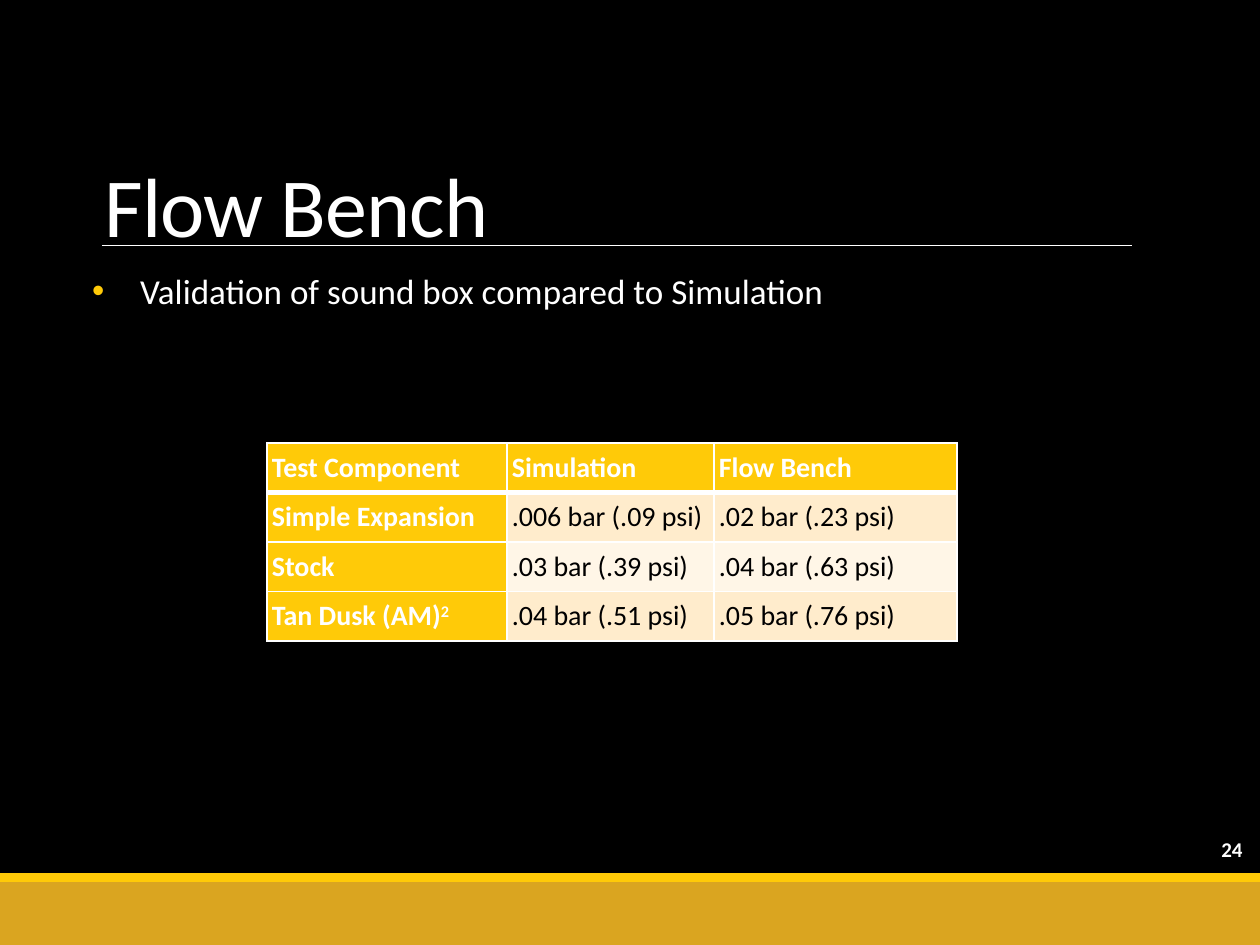
from dataclasses import dataclass

from lxml.etree import SubElement
from pptx import Presentation
from pptx.dml.color import RGBColor
from pptx.enum.shapes import MSO_CONNECTOR, MSO_SHAPE
from pptx.enum.text import MSO_ANCHOR, PP_ALIGN
from pptx.oxml.ns import qn
from pptx.util import Emu, Pt

PX = 914400 / 126


@dataclass(frozen=True)
class Theme:
    font: str = "Calibri"
    background: str = "000000"
    light: str = "FFFFFF"
    dark: str = "000000"
    accent: str = "FFCA08"
    band: str = "DAA520"
    stripes: tuple = ("FFECCC", "FFF6E7")
    title_size: int = 48
    body_size: int = 20
    table_size: int = 16
    number_size: int = 12


THEME = Theme()

RESULTS = [
    ["Test Component", "Simulation", "Flow Bench"],
    ["Simple Expansion", ".006 bar (.09 psi)", ".02 bar (.23 psi)"],
    ["Stock", ".03 bar (.39 psi)", ".04 bar (.63 psi)"],
    ["Tan Dusk (AM)", ".04 bar (.51 psi)", ".05 bar (.76 psi)"],
]
COLUMN_WIDTHS = [240, 207, 243]


def px(length):
    return Emu(round(length * PX))


def rgb(value):
    return RGBColor.from_string(value)


def apply_format(target, values):
    for name, value in values.items():
        setattr(target, name, value)


def add_run(paragraph, text, size, color, bold=False):
    run = paragraph.add_run()
    run.text = text
    apply_format(run.font, {"name": THEME.font, "size": Pt(size), "bold": bold})
    run.font.color.rgb = rgb(color)
    return run


def add_band(slide, top, height, color):
    band = slide.shapes.add_shape(
        MSO_SHAPE.RECTANGLE, 0, px(top), px(1260), px(height)
    )
    band.shadow.inherit = False
    band.fill.solid()
    band.fill.fore_color.rgb = rgb(color)
    band.line.fill.background()


def add_rule(slide, left, right, y):
    rule = slide.shapes.add_connector(
        MSO_CONNECTOR.STRAIGHT, px(left), px(y), px(right), px(y)
    )
    rule.line.color.rgb = rgb(THEME.light)
    rule.line.width = Pt(0.5)
    SubElement(rule._element.spPr, qn("a:effectLst"))


def add_text(slide, box, text, size, frame_format, paragraph_format, bold=False):
    frame = slide.shapes.add_textbox(*map(px, box)).text_frame
    apply_format(frame, {"word_wrap": True, **frame_format})
    paragraph = frame.paragraphs[0]
    apply_format(paragraph, paragraph_format)
    run = add_run(paragraph, text, size, THEME.light, bold)
    return paragraph, run


def add_bullet(paragraph, indent):
    properties = paragraph._p.get_or_add_pPr()
    properties.set("marL", str(px(indent)))
    properties.set("indent", str(-px(indent)))
    bullet_color = SubElement(properties, qn("a:buClr"))
    SubElement(bullet_color, qn("a:srgbClr"), val=THEME.accent)
    SubElement(properties, qn("a:buFont"), typeface="Arial")
    SubElement(properties, qn("a:buChar"), char="•")


def set_borders(cell, top, bottom):
    properties = cell._tc.get_or_add_tcPr()
    for side, width in {"L": 1, "R": 1, "T": top, "B": bottom}.items():
        border = SubElement(properties, qn(f"a:ln{side}"), w=str(Pt(width)))
        fill = SubElement(border, qn("a:solidFill"))
        SubElement(fill, qn("a:srgbClr"), val=THEME.light)


def style_cell(cell, text, row, column):
    heading = row == 0 or column == 0
    set_borders(cell, top=3 if row == 1 else 1, bottom=3 if row == 0 else 1)
    cell.fill.solid()
    fill = THEME.accent if heading else THEME.stripes[(row - 1) % 2]
    cell.fill.fore_color.rgb = rgb(fill)
    apply_format(cell, {
        "vertical_anchor": MSO_ANCHOR.MIDDLE,
        "margin_left": px(5),
        "margin_right": px(5),
        "margin_top": 0,
        "margin_bottom": 0,
    })
    paragraph = cell.text_frame.paragraphs[0]
    paragraph.space_after = Pt(12)
    color = THEME.light if heading else THEME.dark
    add_run(paragraph, text, THEME.table_size, color, heading)
    return paragraph


def add_results_table(slide):
    table = slide.shapes.add_table(
        len(RESULTS), len(COLUMN_WIDTHS),
        px(267), px(443), px(sum(COLUMN_WIDTHS)), px(198),
    ).table
    for column, width in zip(table.columns, COLUMN_WIDTHS):
        column.width = px(width)
    for row, values in enumerate(RESULTS):
        for column, text in enumerate(values):
            paragraph = style_cell(table.cell(row, column), text, row, column)
            if text.endswith("(AM)"):
                mark = add_run(paragraph, "2", THEME.table_size, THEME.light, True)
                mark._r.get_or_add_rPr().set("baseline", "30000")


def main():
    presentation = Presentation()
    apply_format(presentation, {"slide_width": px(1260), "slide_height": px(945)})
    slide = presentation.slides.add_slide(presentation.slide_layouts[6])
    slide.background.fill.solid()
    slide.background.fill.fore_color.rgb = rgb(THEME.background)

    add_band(slide, 882, 63, THEME.band)
    add_band(slide, 873, 9, THEME.accent)
    add_rule(slide, 102, 1132, 245)
    add_text(
        slide, (1119, 824, 136, 50), "24", THEME.number_size,
        {"vertical_anchor": MSO_ANCHOR.MIDDLE},
        {"alignment": PP_ALIGN.RIGHT}, bold=True,
    )
    validation, _ = add_text(
        slide, (92, 268, 751, 554),
        "Validation of sound box compared to Simulation", THEME.body_size,
        {"margin_left": 0, "margin_right": 0},
        {"line_spacing": 0.9, "space_after": Pt(2)},
    )
    add_bullet(validation, 48)
    _, title = add_text(
        slide, (92, 60, 1040, 201), "Flow Bench", THEME.title_size,
        {"vertical_anchor": MSO_ANCHOR.BOTTOM}, {"line_spacing": 0.85},
    )
    title._r.get_or_add_rPr().set("spc", "-50")
    add_results_table(slide)
    presentation.save("out.pptx")


if __name__ == "__main__":
    main()
